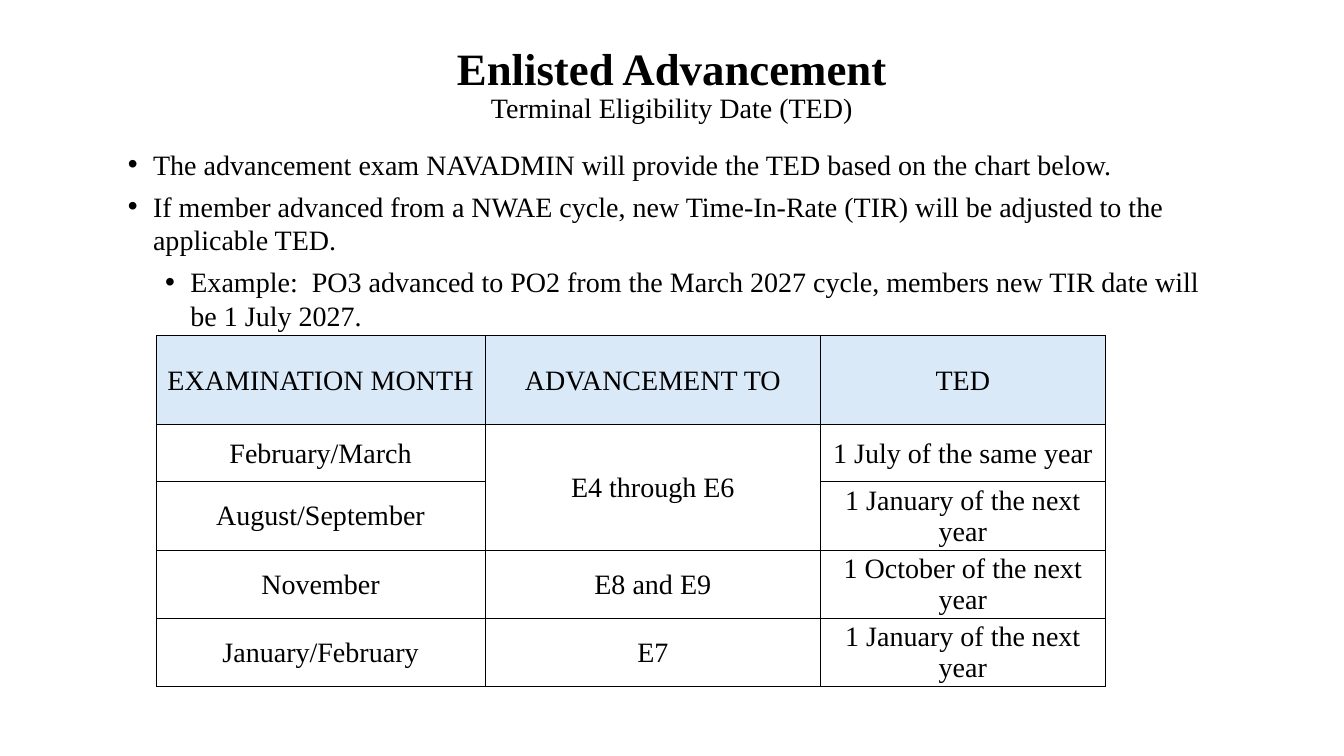
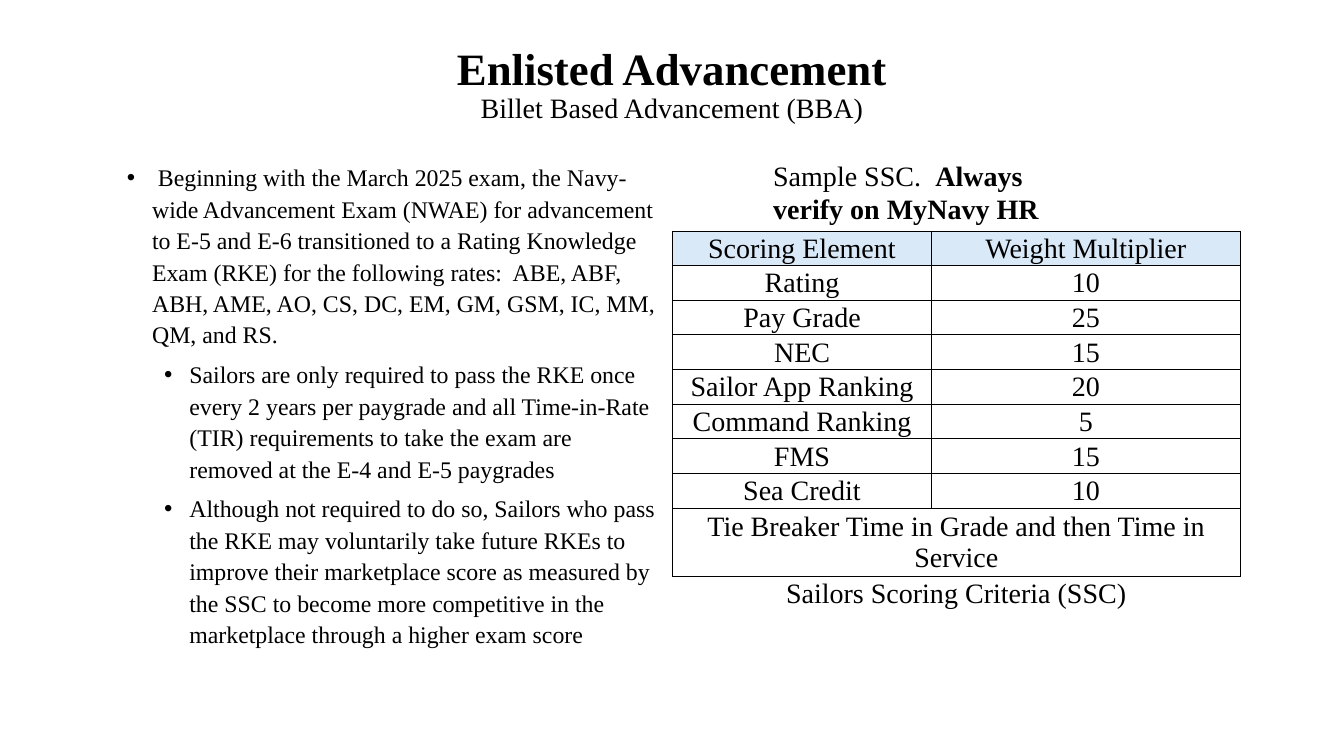
import pptx
import pptx.dml.color
import pptx.enum.text
import pptx.oxml
import pptx.oxml.ns
import pptx.util
from pptx.util import Inches

ALIGN = pptx.enum.text.PP_ALIGN
ANCHOR = pptx.enum.text.MSO_ANCHOR
NAMESPACE = pptx.oxml.ns.nsdecls("a")


def color(value):
    return pptx.dml.color.RGBColor.from_string(value)


class Briefing:
    """Holds the shared style and the slide being built."""

    FONT = "Times New Roman"
    INK = "000000"
    HEADER = "DAE9F8"
    SIZE = 20
    TITLE_SIZE = 32
    BORDER = 0.5

    def __init__(self):
        self.deck = pptx.Presentation()
        self.deck.slide_width = Inches(13.33)
        self.deck.slide_height = Inches(7.5)
        self.slide = None

    def add_slide(self, subtitle):
        self.slide = self.deck.slides.add_slide(self.deck.slide_layouts[6])
        frame = self.add_box(0, 0, 13.33, 1.7)
        frame.vertical_anchor = ANCHOR.MIDDLE
        para = frame.paragraphs[0]
        para.alignment = ALIGN.CENTER
        para.line_spacing = 0.9
        self.style(para.font)
        heading = para.add_run()
        heading.text = "Enlisted Advancement"
        heading.font.size = pptx.util.Pt(self.TITLE_SIZE)
        heading.font.bold = True
        para.add_line_break()
        para.add_run().text = subtitle

    def add_box(self, left, top, width, height):
        box = self.slide.shapes.add_textbox(
            Inches(left), Inches(top), Inches(width), Inches(height))
        box.text_frame.word_wrap = True
        return box.text_frame

    def style(self, font, size=SIZE):
        font.name = self.FONT
        font.size = pptx.util.Pt(size)
        font.color.rgb = color(self.INK)

    def add_bullets(self, place, items, size=SIZE, line_spacing=1.0):
        frame = self.add_box(*place)
        for index, (level, text) in enumerate(items):
            para = frame.add_paragraph() if index else frame.paragraphs[0]
            para.level = level
            para.line_spacing = line_spacing
            para.space_before = pptx.util.Pt(3 if index else 0)
            para.space_after = pptx.util.Pt(3)
            properties = para._p.get_or_add_pPr()
            properties.set("marL", str(Inches(0.25 + 0.37 * level)))
            properties.set("indent", str(Inches(-0.25)))
            properties.append(pptx.oxml.parse_xml(
                f'<a:buFont {NAMESPACE} typeface="Arial"/>'))
            properties.append(pptx.oxml.parse_xml(
                f'<a:buChar {NAMESPACE} char="•"/>'))
            self.style(para.font, size)
            para.add_run().text = text

    def add_note(self, place, plain, strong):
        para = self.add_box(*place).paragraphs[0]
        self.style(para.font)
        para.add_run().text = plain
        span = para.add_run()
        span.text = strong
        span.font.bold = True

    def add_table(self, left, top, widths, heights, rows, merges=(), caption=False):
        table = self.slide.shapes.add_table(
            len(rows), len(widths), Inches(left), Inches(top),
            Inches(sum(widths)), Inches(sum(heights))).table
        table.first_row = False
        table.horz_banding = False
        for column, width in zip(table.columns, widths):
            column.width = Inches(width)
        for row, height in zip(table.rows, heights):
            row.height = Inches(height)
        for row_index, texts in enumerate(rows):
            is_caption = caption and row_index == len(rows) - 1
            for column_index, text in enumerate(texts):
                cell = table.cell(row_index, column_index)
                self.fill_cell(cell, text, row_index == 0)
                self.set_borders(cell, "T" if is_caption else "LRTB")
        for first, last in merges:
            table.cell(*first).merge(table.cell(*last))

    def fill_cell(self, cell, text, is_header):
        cell.margin_left = cell.margin_right = cell.margin_top = Inches(0.01)
        cell.margin_bottom = 0
        cell.vertical_anchor = ANCHOR.MIDDLE
        para = cell.text_frame.paragraphs[0]
        para.alignment = ALIGN.CENTER
        self.style(para.font)
        if text:
            para.add_run().text = text
        if is_header:
            cell.fill.solid()
            cell.fill.fore_color.rgb = color(self.HEADER)
        else:
            cell.fill.background()

    def set_borders(self, cell, sides):
        properties = cell._tc.get_or_add_tcPr()
        solid = f'<a:solidFill><a:srgbClr val="{self.INK}"/></a:solidFill>'
        for position, side in enumerate("LRTB"):
            paint = solid if side in sides else "<a:noFill/>"
            properties.insert(position, pptx.oxml.parse_xml(
                f'<a:ln{side} {NAMESPACE} w="{pptx.util.Pt(self.BORDER)}">'
                f"{paint}</a:ln{side}>"))


def add_eligibility(briefing):
    briefing.add_slide("Terminal Eligibility Date (TED)")
    briefing.add_bullets((1.17, 1.41, 11, 1.92), [
        (0, "The advancement exam NAVADMIN will provide the TED based on the chart below."),
        (0, "If member advanced from a NWAE cycle, new Time-In-Rate (TIR) will be "
            "adjusted to the applicable TED."),
        (1, "Example:  PO3 advanced to PO2 from the March 2027 cycle, members new "
            "TIR date will be 1 July 2027."),
    ])
    briefing.add_table(1.55, 3.33, [3.26, 3.33, 2.82], [0.88, 0.57] + [0.62] * 3, [
        ("EXAMINATION MONTH", "ADVANCEMENT TO", "TED"),
        ("February/March", "E4 through E6", "1 July of the same year"),
        ("August/September", "", "1 January of the next year"),
        ("November", "E8 and E9", "1 October of the next year"),
        ("January/February", "E7", "1 January of the next year"),
    ], merges=[((1, 1), (2, 1))])


def add_billet_based(briefing):
    briefing.add_slide("Billet Based Advancement (BBA)")
    briefing.add_bullets((1.16, 1.54, 5.5, 5.2), [
        (0, " Beginning with the March 2025 exam, the Navy-wide Advancement Exam "
            "(NWAE) for advancement to E-5 and E-6 transitioned to a Rating Knowledge "
            "Exam (RKE) for the following rates:  ABE, ABF, ABH, AME, AO, CS, DC, EM, "
            "GM, GSM, IC, MM, QM, and RS."),
        (1, "Sailors are only required to pass the RKE once every 2 years per paygrade "
            "and all Time-in-Rate (TIR) requirements to take the exam are removed at "
            "the E-4 and E-5 paygrades"),
        (1, "Although not required to do so, Sailors who pass the RKE may voluntarily "
            "take future RKEs to improve their marketplace score as measured by the SSC "
            "to become more competitive in the marketplace through a higher exam score"),
    ], size=17, line_spacing=1.1)
    briefing.add_note((7.57, 1.52, 3, 0.77), "Sample SSC.  ", "Always verify on MyNavy HR")
    weights = [("Rating", 10), ("Pay Grade", 25), ("NEC", 15), ("Sailor App Ranking", 20),
               ("Command Ranking", 5), ("FMS", 15), ("Sea Credit", 10)]
    briefing.add_table(
        6.67, 2.29, [2.57, 3.06], [0.34] * 8 + [0.68, 0.34],
        [("Scoring Element", "Weight Multiplier")]
        + [(element, str(weight)) for element, weight in weights]
        + [("Tie Breaker Time in Grade and then Time in Service", ""),
           ("Sailors Scoring Criteria (SSC)", "")],
        merges=[((8, 0), (8, 1)), ((9, 0), (9, 1))], caption=True)


def main():
    briefing = Briefing()
    add_eligibility(briefing)
    add_billet_based(briefing)
    briefing.deck.save("out.pptx")


if __name__ == "__main__":
    main()
